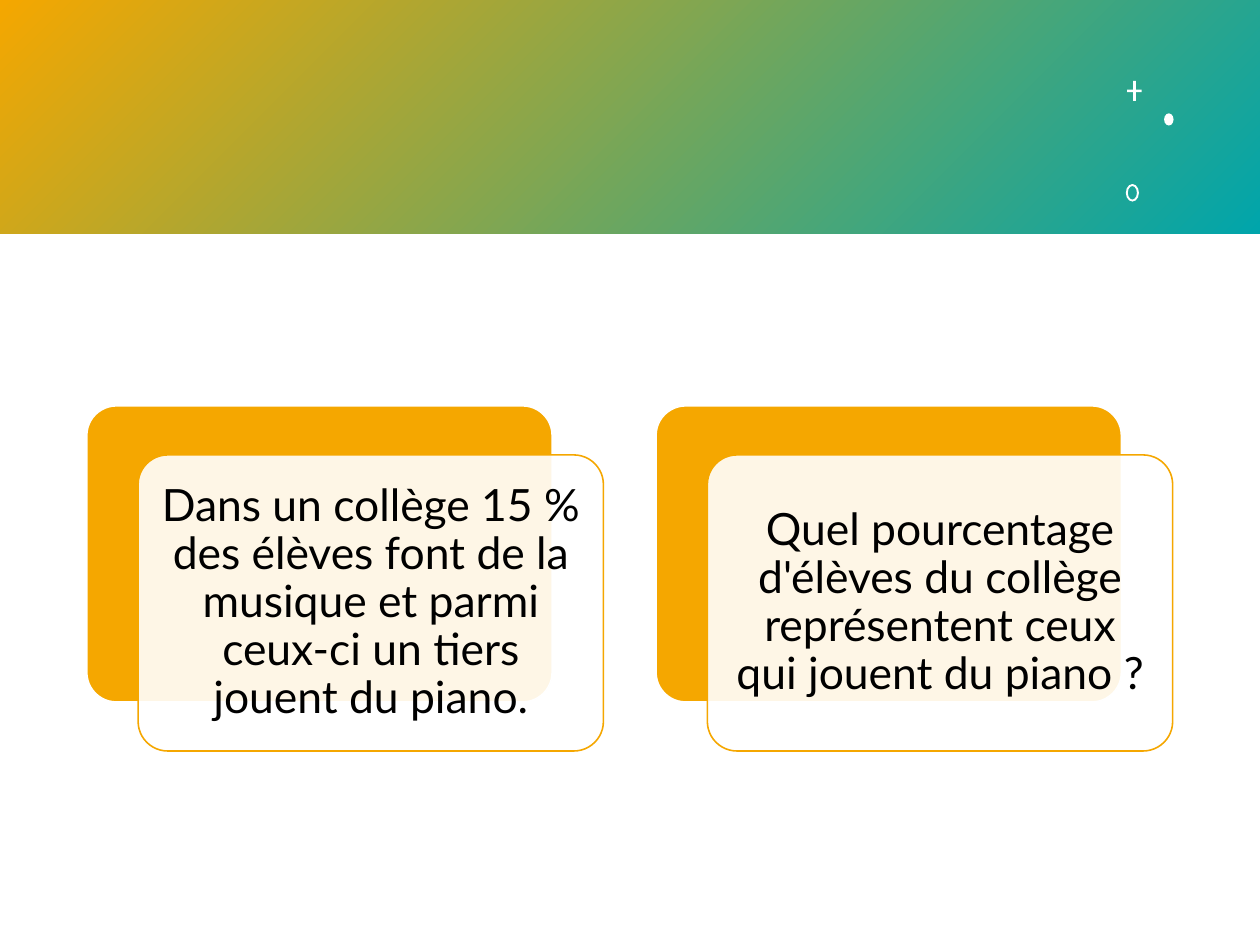
"""Build a slide with a gradient banner and two layered cards stating a percentage problem."""
from lxml.etree import SubElement
from pptx import Presentation
from pptx.dml.color import RGBColor
from pptx.enum.shapes import MSO_SHAPE as SHAPE
from pptx.enum.text import MSO_ANCHOR as ANCHOR, PP_ALIGN as ALIGN
from pptx.oxml.ns import qn
from pptx.util import Cm, Pt

CARDS = [
    "Dans un collège 15 % des élèves font de la musique et parmi ceux-ci un tiers jouent du piano.",
    "Quel pourcentage d'élèves du collège représentent ceux qui jouent du piano ?",
]
ORANGE, TEAL, WHITE, BLACK = "F5A700", "00A5AB", "FFFFFF", "000000"
SLIDE_W, SLIDE_H, BANNER_H = 28, 21, 5.18
CARD_LEFT, CARD_TOP, CARD_W, CARD_H = 1.93, 9.02, 10.34, 6.58
CARD_PITCH, SHIFT_X, SHIFT_Y = 12.65, 1.14, 1.09
DOT = (25.87, 2.52, 0.21, 0.27)
RING = (25.02, 4.09, 0.29, 0.39)
PLUS_X, PLUS_Y, ARM_X, ARM_Y, HALF = 25.21, 2.02, 0.16, 0.22, 0.03
FRAME = {
    "word_wrap": True, "vertical_anchor": ANCHOR.MIDDLE,
    "margin_left": Cm(0.3), "margin_right": Cm(0.3),
    "margin_top": Cm(0.3), "margin_bottom": Cm(0.3),
}
PARAGRAPH = {"alignment": ALIGN.CENTER, "line_spacing": 0.9}
FONT = {"name": "Lato", "size": Pt(28)}


def rgb(value):
    return RGBColor.from_string(value)


def apply(target, values):
    for name, value in values.items():
        setattr(target, name, value)


def paint(sp, fill, line=None):
    sp.shadow.inherit = False
    sp.fill.solid()
    sp.fill.fore_color.rgb = rgb(fill)
    if line:
        sp.line.color.rgb = rgb(line)
        sp.line.width = Pt(1)
    else:
        sp.line.fill.background()


def add(s, kind, box, fill, line=None, adj=None):
    sp = s.shapes.add_shape(kind, *map(Cm, box))
    paint(sp, fill, line)
    if adj is not None:
        sp.adjustments[0] = adj
    return sp


def add_banner(s):
    sp = add(s, SHAPE.RECTANGLE, (0, 0, SLIDE_W, BANNER_H), ORANGE)
    sp.fill.gradient()
    sp.fill.gradient_angle = 315
    for stop, color in zip(sp.fill.gradient_stops, (ORANGE, TEAL)):
        stop.color.rgb = rgb(color)


def add_plus(s):
    quarter = [(HALF, ARM_Y), (HALF, HALF), (ARM_X, HALF)]
    points = []
    for sx, sy in ((1, 1), (1, -1), (-1, -1), (-1, 1)):
        corner = [(Cm(PLUS_X + sx * x), Cm(PLUS_Y + sy * y)) for x, y in quarter]
        points += corner if sx == sy else corner[::-1]
    builder = s.shapes.build_freeform(*points[0])
    builder.add_line_segments(points[1:], close=True)
    paint(builder.convert_to_shape(), WHITE)


def add_card(s, left, text):
    add(s, SHAPE.ROUNDED_RECTANGLE, (left, CARD_TOP, CARD_W, CARD_H), ORANGE, WHITE, 0.1)
    front = (left + SHIFT_X, CARD_TOP + SHIFT_Y, CARD_W, CARD_H)
    sp = add(s, SHAPE.ROUNDED_RECTANGLE, front, WHITE, ORANGE, 0.1)
    color = sp.fill._xPr.find(qn("a:solidFill"))[0]
    SubElement(color, qn("a:alpha"), val="90000")
    tf = sp.text_frame
    apply(tf, FRAME)
    p = tf.paragraphs[0]
    apply(p, PARAGRAPH)
    r = p.add_run()
    r.text = text
    apply(r.font, FONT)
    r.font.color.rgb = rgb(BLACK)


def main():
    prs = Presentation()
    prs.slide_width, prs.slide_height = Cm(SLIDE_W), Cm(SLIDE_H)
    s = prs.slides.add_slide(prs.slide_layouts[6])
    add_banner(s)
    add_plus(s)
    add(s, SHAPE.OVAL, DOT, WHITE)
    add(s, SHAPE.DONUT, RING, WHITE, adj=0.15)
    for i, text in enumerate(CARDS):
        add_card(s, CARD_LEFT + i * CARD_PITCH, text)
    prs.save("out.pptx")


if __name__ == "__main__":
    main()
